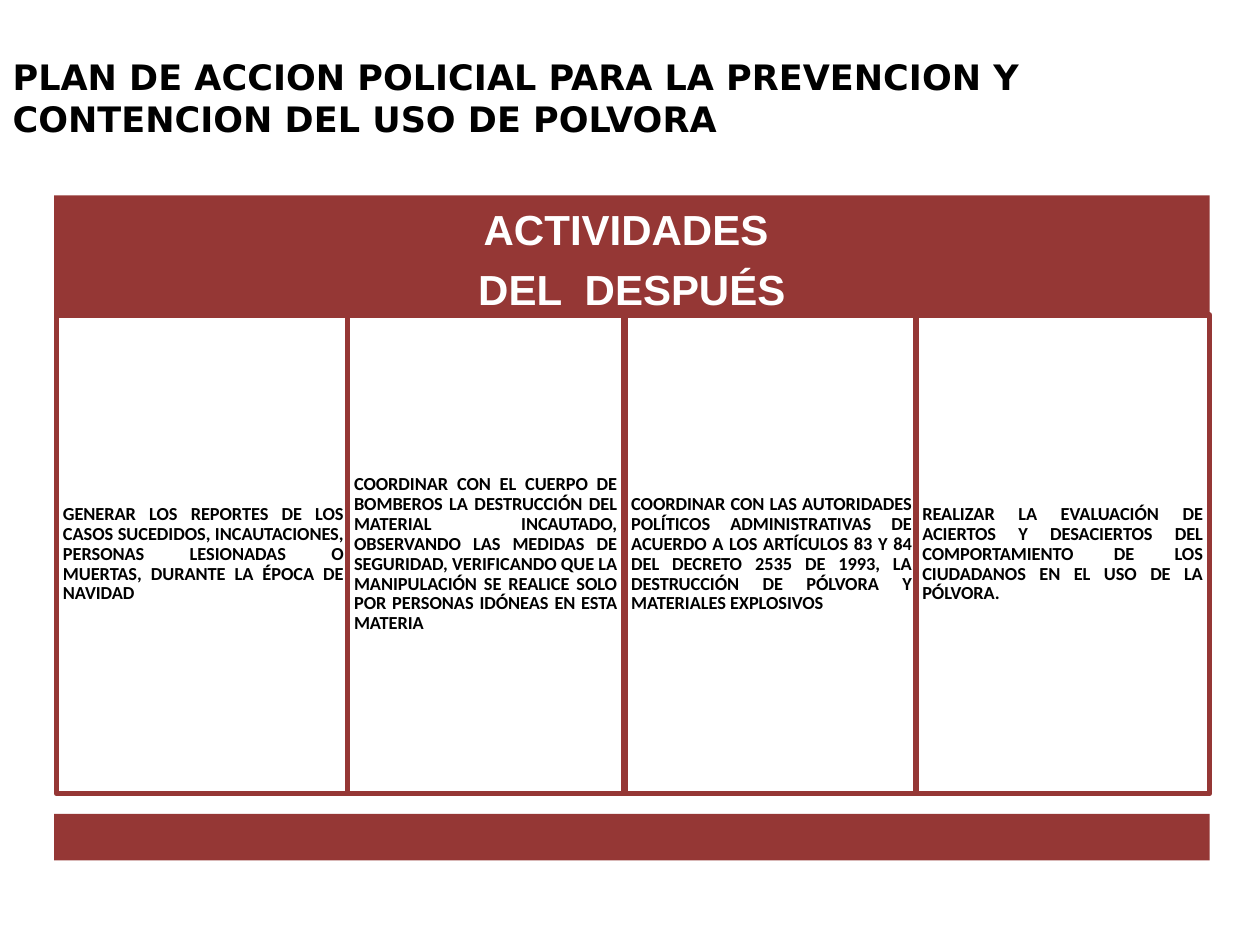
from dataclasses import dataclass

from pptx import Presentation
from pptx.dml.color import RGBColor
from pptx.enum.shapes import MSO_SHAPE
from pptx.enum.text import MSO_ANCHOR, PP_ALIGN
from pptx.util import Emu, Pt

PX = 9144  # 100 px to the inch
RECTANGLE = MSO_SHAPE.RECTANGLE
TOP, MIDDLE = MSO_ANCHOR.TOP, MSO_ANCHOR.MIDDLE
LEFT, CENTER, JUSTIFY = PP_ALIGN.LEFT, PP_ALIGN.CENTER, PP_ALIGN.JUSTIFY

RED, WHITE, BLACK = "953735", "FFFFFF", "000000"
BAND_LEFT, BAND_WIDTH = 43, 917
CARD_TOP, CARD_HEIGHT = 250, 380


@dataclass(frozen=True)
class TextStyle:
    font: str
    size: float
    color: str
    align: PP_ALIGN
    anchor: MSO_ANCHOR
    margins: tuple[int, int]  # horizontal, vertical
    line_spacing: float = 1.0
    space_after: float = 0


@dataclass(frozen=True)
class Card:
    left: int
    width: int
    text: str


TITLE = TextStyle("DejaVu Sans", 20, BLACK, LEFT, TOP, (10, 5))
HEADING = TextStyle("Arial", 24, WHITE, CENTER, MIDDLE, (10, 10), 0.9, 8.4)
ACTIVITY = TextStyle("Calibri", 10.5, BLACK, JUSTIFY, MIDDLE, (5, 5), 0.9, 3.7)

CARDS = [
    Card(45, 233, "GENERAR LOS REPORTES DE LOS CASOS SUCEDIDOS, INCAUTACIONES, "
         "PERSONAS LESIONADAS O MUERTAS, DURANTE LA ÉPOCA DE NAVIDAD "),
    Card(276, 219, "COORDINAR CON EL CUERPO DE BOMBEROS LA DESTRUCCIÓN DEL MATERIAL "
         "INCAUTADO, OBSERVANDO LAS MEDIDAS DE SEGURIDAD, VERIFICANDO QUE LA "
         "MANIPULACIÓN SE REALICE SOLO POR PERSONAS IDÓNEAS EN ESTA MATERIA "),
    Card(496, 233, "COORDINAR CON LAS AUTORIDADES POLÍTICOS ADMINISTRATIVAS DE "
         "ACUERDO A LOS ARTÍCULOS 83 Y 84 DEL DECRETO 2535 DE 1993, LA "
         "DESTRUCCIÓN DE PÓLVORA Y MATERIALES EXPLOSIVOS"),
    Card(727, 233, "REALIZAR LA EVALUACIÓN DE ACIERTOS Y DESACIERTOS DEL "
         "COMPORTAMIENTO DE LOS CIUDADANOS EN EL USO DE LA PÓLVORA. "),
]


def px(length: int) -> Emu:
    return Emu(length * PX)


def rgb(color: str) -> RGBColor:
    return RGBColor.from_string(color)


def place(shape, left: int, top: int, width: int, height: int) -> None:
    shape.left, shape.top = px(left), px(top)
    shape.width, shape.height = px(width), px(height)


def write(shape, text: str, style: TextStyle) -> None:
    frame = shape.text_frame
    frame.text = text
    frame.word_wrap = True
    frame.vertical_anchor = style.anchor
    horizontal, vertical = style.margins
    frame.margin_left = frame.margin_right = px(horizontal)
    frame.margin_top = frame.margin_bottom = px(vertical)
    for para in frame.paragraphs:
        para.alignment = style.align
        para.line_spacing = style.line_spacing
        para.space_before = Pt(0)
        para.space_after = Pt(style.space_after)
        para.font.name = style.font
        para.font.size = Pt(style.size)
        para.font.bold = True
        para.font.color.rgb = rgb(style.color)


def add_box(page, left: int, top: int, width: int, height: int,
            fill: str, line: str | None = None):
    box = page.shapes.add_shape(RECTANGLE, px(left), px(top), px(width), px(height))
    box.shadow.inherit = False
    box.fill.solid()
    box.fill.fore_color.rgb = rgb(fill)
    if line:
        box.line.color.rgb = rgb(line)
        box.line.width = Pt(3.15)
    else:
        box.line.fill.background()
    return box


def main() -> None:
    deck = Presentation()
    deck.slide_width, deck.slide_height = px(1000), px(750)
    page = deck.slides.add_slide(deck.slide_layouts[5])

    # Title
    title = page.shapes.title
    place(title, 0, 39, 854, 77)
    write(title, "PLAN DE ACCION POLICIAL PARA LA PREVENCION Y CONTENCION "
          "DEL USO DE POLVORA", TITLE)

    # Heading band
    heading = add_box(page, BAND_LEFT, 155, BAND_WIDTH, 106, RED)
    write(heading, "ACTIVIDADES \nDEL  DESPUÉS", HEADING)

    # Activity cards
    for card in CARDS:
        box = add_box(page, card.left, CARD_TOP, card.width, CARD_HEIGHT, WHITE, RED)
        write(box, card.text, ACTIVITY)

    # Closing band
    add_box(page, BAND_LEFT, 646, BAND_WIDTH, 37, RED)

    deck.save("out.pptx")


if __name__ == "__main__":
    main()
